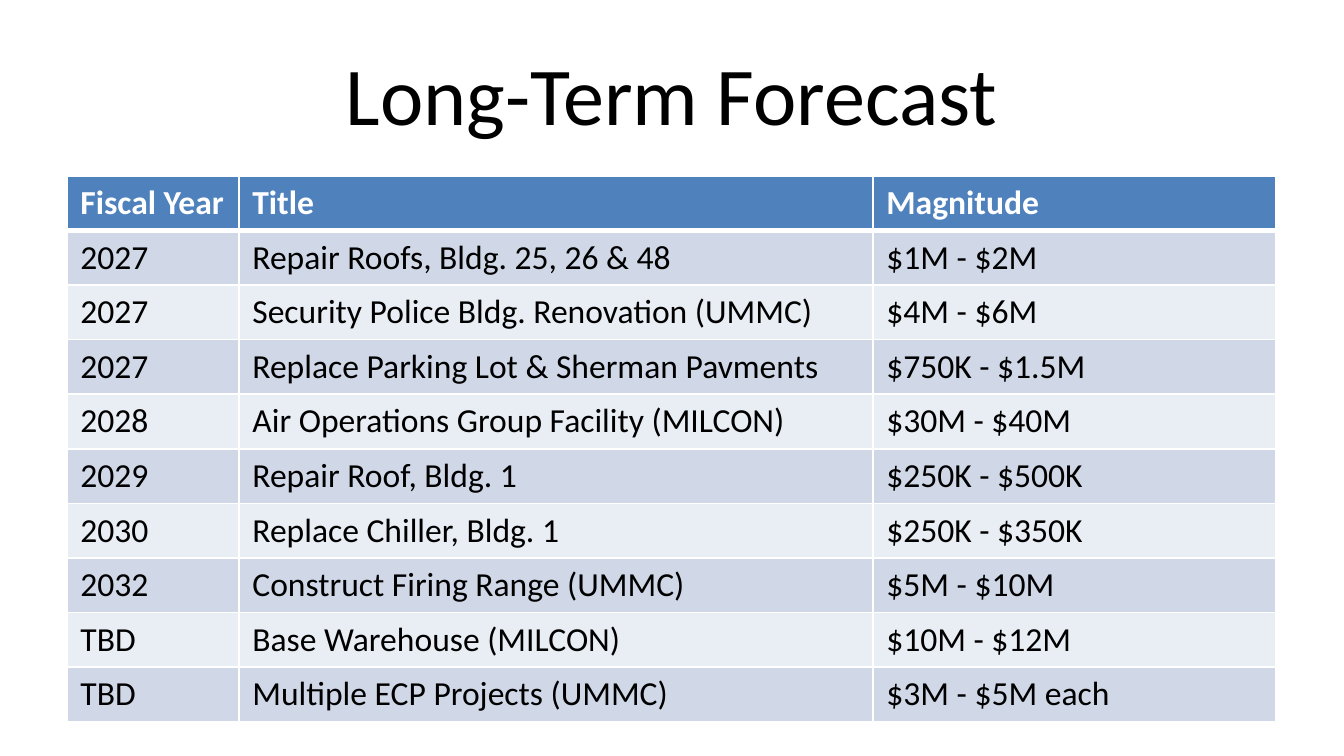
import pptx
import pptx.util
import pptx.dml.color
import pptx.enum.text
import pptx.oxml.ns
from lxml import etree

PX = 914400 / 134.4
COLORS = {
    "black": "000000",
    "white": "FFFFFF",
    "header": "4F81BD",
    "odd row": "D0D8E8",
    "even row": "E9EDF4",
}
HEADINGS = ("Fiscal Year", "Title", "Magnitude")
PROJECTS = [
    ("2027", "Repair Roofs, Bldg. 25, 26 & 48", "$1M - $2M"),
    ("2027", "Security Police Bldg. Renovation (UMMC)", "$4M - $6M"),
    ("2027", "Replace Parking Lot & Sherman Pavments", "$750K - $1.5M"),
    ("2028", "Air Operations Group Facility (MILCON)", "$30M - $40M"),
    ("2029", "Repair Roof, Bldg. 1", "$250K - $500K"),
    ("2030", "Replace Chiller, Bldg. 1", "$250K - $350K"),
    ("2032", "Construct Firing Range (UMMC)", "$5M - $10M"),
    ("TBD", "Base Warehouse (MILCON)", "$10M - $12M"),
    ("TBD", "Multiple ECP Projects (UMMC)", "$3M - $5M each"),
]
COLUMN_WIDTHS = (172, 634, 403)
TABLE_HEIGHT = 546


def px(*lengths):
    return [pptx.util.Emu(round(length * PX)) for length in lengths]


def write_text(frame, text, size=18, color="black", bold=False,
               align=pptx.enum.text.PP_ALIGN.LEFT):
    paragraph = frame.paragraphs[0]
    paragraph.alignment = align
    run = paragraph.add_run()
    run.text = text
    run.font.name = "Calibri"
    run.font.size = pptx.util.Pt(size)
    run.font.bold = bold
    run.font.color.rgb = pptx.dml.color.RGBColor.from_string(COLORS[color])


presentation = pptx.Presentation()
presentation.slide_width, presentation.slide_height = px(1344, 756)
slide = presentation.slides.add_slide(presentation.slide_layouts[5])

# Title
title = slide.shapes.title
title.left, title.top, title.width, title.height = px(67, 30, 1210, 126)
title.text_frame.vertical_anchor = pptx.enum.text.MSO_ANCHOR.MIDDLE
write_text(title.text_frame, "Long-Term Forecast", size=44,
           align=pptx.enum.text.PP_ALIGN.CENTER)

# Forecast table
rows = [HEADINGS] + PROJECTS
table = slide.shapes.add_table(
    len(rows), len(HEADINGS), *px(67, 176, sum(COLUMN_WIDTHS), TABLE_HEIGHT)).table
for column, width in zip(table.columns, px(*COLUMN_WIDTHS)):
    column.width = width
for row in table.rows:
    row.height = px(TABLE_HEIGHT / len(rows))[0]

for row_index, row_texts in enumerate(rows):
    is_header = row_index == 0
    fill = "header" if is_header else "odd row" if row_index % 2 else "even row"
    for column_index, text in enumerate(row_texts):
        cell = table.cell(row_index, column_index)
        write_text(cell.text_frame, text, bold=is_header,
                   color="white" if is_header else "black")

        # White cell borders, thick between the header and the body
        properties = cell._tc.get_or_add_tcPr()
        for side in ("L", "R", "T", "B"):
            thick = (row_index, side) in ((0, "B"), (1, "T"))
            border = etree.SubElement(properties, pptx.oxml.ns.qn(f"a:ln{side}"),
                                      w=str(pptx.util.Pt(3 if thick else 1)))
            solid = etree.SubElement(border, pptx.oxml.ns.qn("a:solidFill"))
            etree.SubElement(solid, pptx.oxml.ns.qn("a:srgbClr"), val=COLORS["white"])

        cell.fill.solid()
        cell.fill.fore_color.rgb = pptx.dml.color.RGBColor.from_string(COLORS[fill])

presentation.save("out.pptx")
